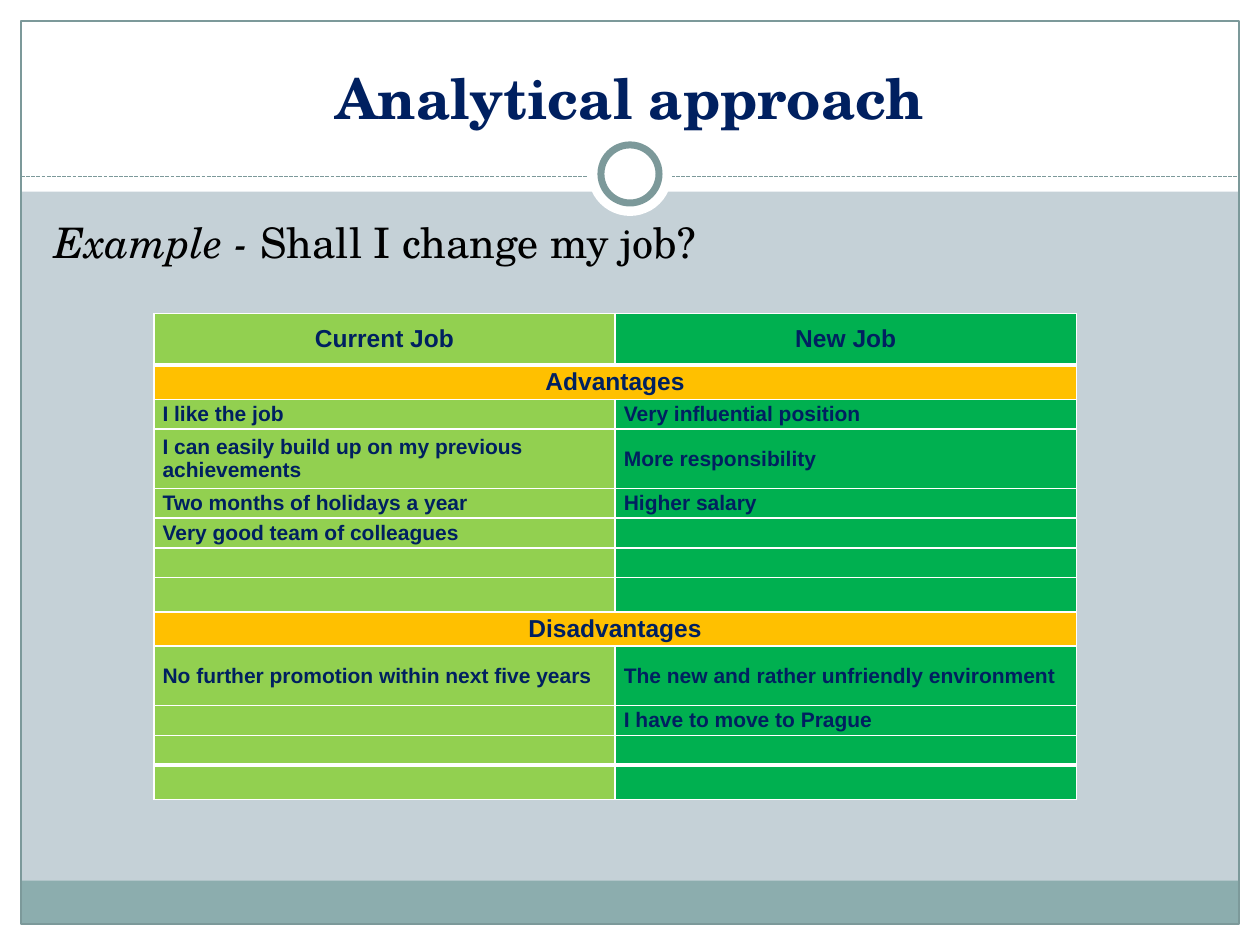
"""Build the slide that weighs a current job against a new one."""
from lxml.etree import SubElement
from pptx import Presentation
from pptx.dml.color import RGBColor
from pptx.enum.dml import MSO_LINE
from pptx.enum.shapes import MSO_CONNECTOR, MSO_SHAPE
from pptx.enum.text import MSO_ANCHOR, PP_ALIGN
from pptx.oxml.ns import qn
from pptx.util import Pt

WHITE = RGBColor(0xFF, 0xFF, 0xFF)
BLACK = RGBColor(0x00, 0x00, 0x00)
NAVY = RGBColor(0x00, 0x20, 0x60)
PALE_BLUE = RGBColor(0xC5, 0xD1, 0xD7)
TEAL = RGBColor(0x8C, 0xAD, 0xAE)
DARK_TEAL = RGBColor(0x7C, 0x99, 0x9A)
LIGHT_GREEN = RGBColor(0x92, 0xD0, 0x50)
GREEN = RGBColor(0x00, 0xB0, 0x50)
AMBER = RGBColor(0xFF, 0xC0, 0x00)

SERIF, SANS = "TeX Gyre Schola", "Arial"
WIDTH, HEIGHT, MARGIN = 720, 540, 12
HEADER_HEIGHT, RULE_TOP = 109.5, 100.8
TABLE_LEFT, TABLE_TOP, COLUMN_WIDTH = 87.9, 179.2, 263.6
THIN, THICK = 1, 3

TITLE = "Analytical approach"
EXAMPLE = [("Example - ", True), ("Shall I change my job?", False)]
ROWS = [
    (29.4, "Current Job", "New Job"),
    (19.6, "Advantages"),
    (17, "I like the job", "Very influential position"),
    (34, "I can easily build up on my previous achievements", "More responsibility"),
    (17, "Two months of holidays a year", "Higher salary"),
    (17, "Very good team of colleagues", ""),
    (17, "", ""),
    (19.6, "", ""),
    (19.6, "Disadvantages"),
    (34, "No further promotion within next five years",
     "The new and rather unfriendly environment"),
    (17, "", "I have to move to Prague"),
    (17, "", ""),
    (19.6, "", ""),
]
THICK_RULES = (1, len(ROWS) - 1)


def add_shape(slide, kind, left, top, width, height, fill=None, line_width=None):
    shape = slide.shapes.add_shape(kind, Pt(left), Pt(top), Pt(width), Pt(height))
    shape.shadow.inherit = False
    if fill is None:
        shape.fill.background()
    else:
        shape.fill.solid()
        shape.fill.fore_color.rgb = fill
    if line_width is None:
        shape.line.fill.background()
    else:
        shape.line.color.rgb = DARK_TEAL
        shape.line.width = Pt(line_width)


def add_circle(slide, diameter, line_width=None):
    add_shape(slide, MSO_SHAPE.OVAL, (WIDTH - diameter) / 2, 99.4 - diameter / 2,
              diameter, diameter, WHITE, line_width)


def add_backdrop(slide):
    slide.background.fill.solid()
    slide.background.fill.fore_color.rgb = PALE_BLUE
    inner_width, inner_height = WIDTH - 2 * MARGIN, HEIGHT - 2 * MARGIN
    bands = [
        (0, HEIGHT - MARGIN, WIDTH, MARGIN, WHITE),
        (0, 0, WIDTH, HEADER_HEIGHT, WHITE),
        (0, 0, MARGIN, HEIGHT, WHITE),
        (WIDTH - MARGIN, 0, MARGIN, HEIGHT, WHITE),
        (MARGIN, 503.2, inner_width, 24.6, TEAL),
    ]
    for band in bands:
        add_shape(slide, MSO_SHAPE.RECTANGLE, *band)
    add_shape(slide, MSO_SHAPE.RECTANGLE, MARGIN, MARGIN, inner_width, inner_height,
              line_width=0.75)
    rule = slide.shapes.add_connector(MSO_CONNECTOR.STRAIGHT, Pt(MARGIN), Pt(RULE_TOP),
                                      Pt(WIDTH - MARGIN), Pt(RULE_TOP))
    rule.line.color.rgb = DARK_TEAL
    rule.line.width = Pt(0.75)
    rule.line.dash_style = MSO_LINE.SQUARE_DOT
    SubElement(rule._element.spPr, qn("a:effectLst"))
    add_circle(slide, 48)
    add_circle(slide, 33.2, 4)


def format_font(font, name, size, color, bold=False, italic=False):
    font.name, font.size, font.bold, font.italic = name, Pt(size), bold, italic
    font.color.rgb = color


def add_text_box(slide, left, top, width, height, anchor):
    text_frame = slide.shapes.add_textbox(Pt(left), Pt(top), Pt(width), Pt(height)).text_frame
    text_frame.word_wrap = True
    text_frame.vertical_anchor = anchor
    return text_frame.paragraphs[0]


def add_heading(slide):
    paragraph = add_text_box(slide, 24, 18, 672, 60, MSO_ANCHOR.BOTTOM)
    paragraph.text = TITLE
    paragraph.alignment = PP_ALIGN.CENTER
    format_font(paragraph.runs[0].font, SERIF, 32, NAVY, bold=True)

    paragraph = add_text_box(slide, 24, 120, 654, 360, MSO_ANCHOR.TOP)
    paragraph.space_before = Pt(4.8)
    for text, italic in EXAMPLE:
        run = paragraph.add_run()
        run.text = text
        format_font(run.font, SERIF, 24, BLACK, italic=italic)


def set_borders(cell, row_index):
    top = THICK if row_index in THICK_RULES else THIN
    bottom = THICK if row_index + 1 in THICK_RULES else THIN
    properties = cell._tc.get_or_add_tcPr()
    for side, width in (("L", THIN), ("R", THIN), ("T", top), ("B", bottom)):
        border = SubElement(properties, qn(f"a:ln{side}"), w=str(Pt(width)))
        fill = SubElement(border, qn("a:solidFill"))
        SubElement(fill, qn("a:srgbClr"), val=str(WHITE))


def fill_cell(cell, row_index, text, color, heading):
    set_borders(cell, row_index)
    cell.fill.solid()
    cell.fill.fore_color.rgb = color
    cell.margin_left = cell.margin_right = Pt(5)
    cell.margin_top = cell.margin_bottom = 0
    cell.vertical_anchor = MSO_ANCHOR.MIDDLE
    paragraph = cell.text_frame.paragraphs[0]
    if not text:
        SubElement(paragraph._p, qn("a:endParaRPr"), sz="1200")
        return
    paragraph.text = text
    paragraph.alignment = PP_ALIGN.CENTER if heading else PP_ALIGN.LEFT
    format_font(paragraph.runs[0].font, SANS, 14 if heading else 12, NAVY, bold=True)


def add_job_table(slide):
    total_height = sum(row[0] for row in ROWS)
    table = slide.shapes.add_table(len(ROWS), 2, Pt(TABLE_LEFT), Pt(TABLE_TOP),
                                   Pt(2 * COLUMN_WIDTH), Pt(total_height)).table
    for column in table.columns:
        column.width = Pt(COLUMN_WIDTH)
    for row_index, (height, *texts) in enumerate(ROWS):
        table.rows[row_index].height = Pt(height)
        section = len(texts) == 1
        if section:
            table.cell(row_index, 0).merge(table.cell(row_index, 1))
            texts = texts + [""]
        colors = (AMBER, AMBER) if section else (LIGHT_GREEN, GREEN)
        for column_index, (text, color) in enumerate(zip(texts, colors)):
            fill_cell(table.cell(row_index, column_index), row_index, text, color,
                      section or row_index == 0)


def main():
    presentation = Presentation()
    presentation.slide_width, presentation.slide_height = Pt(WIDTH), Pt(HEIGHT)
    slide = presentation.slides.add_slide(presentation.slide_layouts[6])
    add_backdrop(slide)
    add_heading(slide)
    add_job_table(slide)
    presentation.save("out.pptx")


if __name__ == "__main__":
    main()
